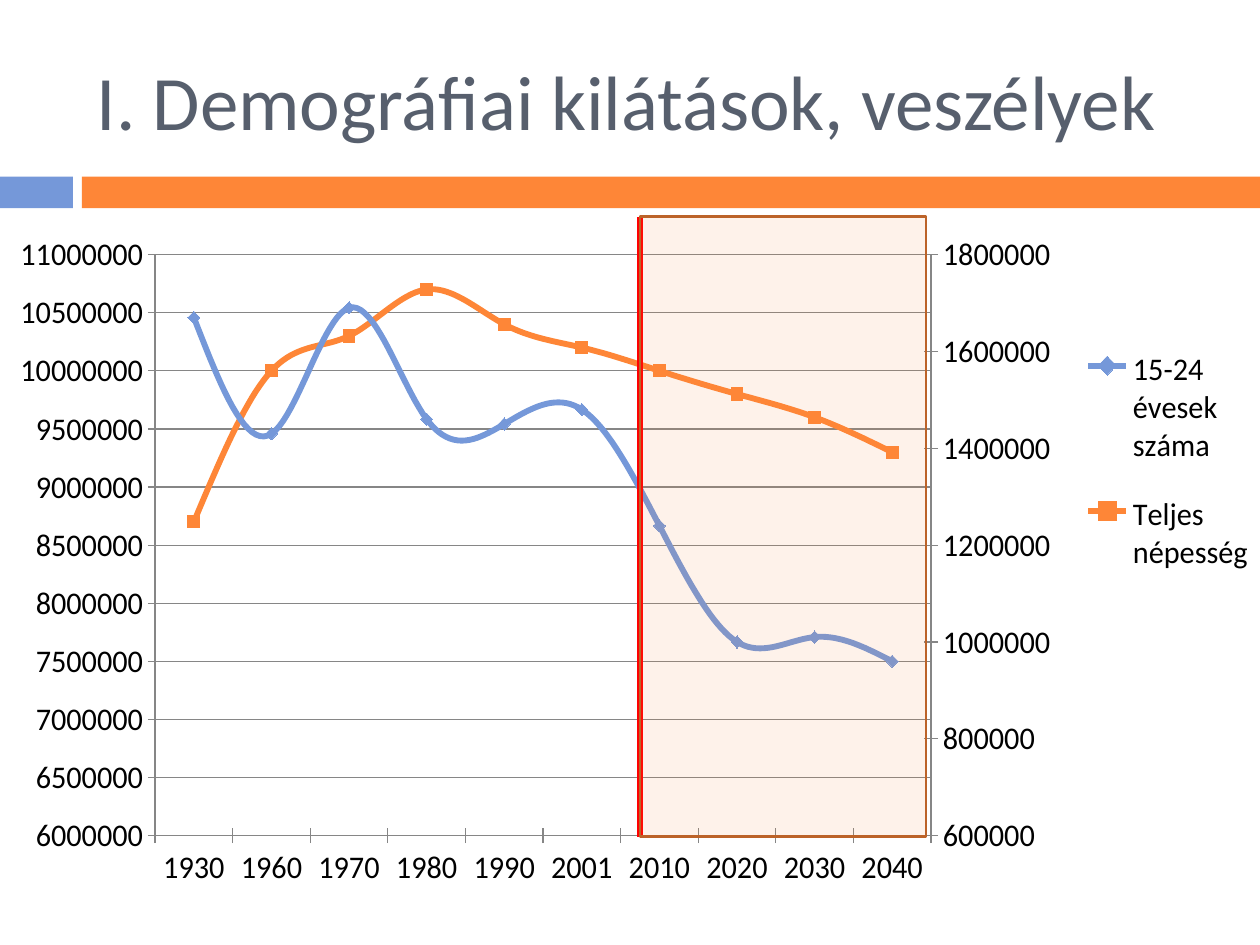
import copy

import pptx
import pptx.chart.data
import pptx.dml.color
import pptx.enum.chart
import pptx.enum.shapes
import pptx.enum.text
import pptx.oxml
import pptx.oxml.ns
import pptx.util

Cm, Pt = pptx.util.Cm, pptx.util.Pt
RGB = pptx.dml.color.RGBColor
qn = pptx.oxml.ns.qn
ENUM = pptx.enum.chart

BLUE = RGB(0x75, 0x98, 0xD9)
ORANGE = RGB(0xFE, 0x86, 0x37)
BROWN = RGB(0xBC, 0x63, 0x29)
SLATE = RGB(0x57, 0x5F, 0x6D)
GRAY = RGB(0x86, 0x86, 0x86)
RED = RGB(0xFF, 0x00, 0x00)
BLACK = RGB(0x00, 0x00, 0x00)
FONT = "Calibri"

YEARS = ["1930", "1960", "1970", "1980", "1990",
         "2001", "2010", "2020", "2030", "2040"]
TOTAL = [8700000, 10000000, 10300000, 10700000, 10400000,
         10200000, 10000000, 9800000, 9600000, 9300000]
YOUTH = [1670000, 1430000, 1690000, 1460000, 1450000,
         1480000, 1240000, 1000000, 1010000, 960000]


def add_box(slide, spot, fill, edge=None, alpha=None):
    box = slide.shapes.add_shape(
        pptx.enum.shapes.MSO_SHAPE.RECTANGLE, *map(Cm, spot))
    box.shadow.inherit = False
    box.fill.solid()
    box.fill.fore_color.rgb = fill
    if alpha is not None:
        color = box.element.spPr.find(".//" + qn("a:srgbClr"))
        node = color.makeelement(qn("a:alpha"), {"val": str(alpha * 1000)})
        color.append(node)
    if edge is None:
        box.line.fill.background()
    else:
        box.line.color.rgb = edge
        box.line.width = Pt(1.5)


def add_title(slide, text):
    frame = slide.shapes.add_textbox(
        Cm(1.7), Cm(0.64), Cm(22.66), Cm(2.74)).text_frame
    frame.word_wrap = True
    frame.vertical_anchor = pptx.enum.text.MSO_ANCHOR.MIDDLE
    line = frame.paragraphs[0]
    line.text = text
    line.font.name, line.font.size = FONT, Pt(44)
    line.font.color.rgb = SLATE


def add_rule(slide, x, foot, top):
    rule = slide.shapes.add_connector(
        pptx.enum.shapes.MSO_CONNECTOR.STRAIGHT, Cm(x), Cm(foot), Cm(x), Cm(top))
    rule.line.color.rgb = RED
    rule.line.width = Pt(3)
    props = rule.element.spPr
    props.append(props.makeelement(qn("a:effectLst"), {}))


def make_layout(x, y, w, h, inner=False):
    target = '<c:layoutTarget val="inner"/>' if inner else ""
    return pptx.oxml.parse_xml(
        f'<c:layout {pptx.oxml.ns.nsdecls("c")}><c:manualLayout>{target}'
        '<c:xMode val="edge"/><c:yMode val="edge"/>'
        f'<c:x val="{x}"/><c:y val="{y}"/><c:w val="{w}"/><c:h val="{h}"/>'
        '</c:manualLayout></c:layout>')


def set_layout(owner, layout, after=None):
    for old in owner.findall(qn("c:layout")):
        owner.remove(old)
    if after is None:
        owner.insert(0, layout)
    else:
        owner.find(qn(after)).addnext(layout)


def style_line(line, color, marker):
    line.smooth = True
    line.format.line.color.rgb = color
    line.format.line.width = Pt(3.5)
    line.marker.style = marker
    line.marker.size = 7
    line.marker.format.fill.solid()
    line.marker.format.fill.fore_color.rgb = color
    line.marker.format.line.color.rgb = color


def style_axes(chart):
    axis = chart.value_axis
    axis.minimum_scale, axis.maximum_scale = 6000000, 11000000
    axis.major_unit = 500000
    axis.has_major_gridlines = True
    axis.major_gridlines.format.line.color.rgb = GRAY
    axis.tick_labels.number_format = "General"
    axis.tick_labels.number_format_is_linked = False
    for each in (axis, chart.category_axis):
        each.major_tick_mark = ENUM.XL_TICK_MARK.CROSS
        each.format.line.color.rgb = GRAY


def split_axes(chart):
    area = chart.element.find(".//" + qn("c:plotArea"))
    first = area.find(qn("c:lineChart"))
    second = copy.deepcopy(first)
    first.remove(first.findall(qn("c:ser"))[1])
    second.remove(second.find(qn("c:ser")))
    first.addnext(second)
    cat = copy.deepcopy(area.find(qn("c:catAx")))
    val = copy.deepcopy(area.find(qn("c:valAx")))
    area.find(qn("c:valAx")).addnext(val)
    val.addnext(cat)
    for node, key in zip(second.findall(qn("c:axId")), ("5001", "5002")):
        node.set("val", key)
    for axis, own, other in ((cat, "5001", "5002"), (val, "5002", "5001")):
        axis.find(qn("c:axId")).set("val", own)
        axis.find(qn("c:crossAx")).set("val", other)
    cat.find(qn("c:delete")).set("val", "1")
    val.remove(val.find(qn("c:majorGridlines")))
    val.find(qn("c:axPos")).set("val", "r")
    val.find(qn("c:crosses")).set("val", "max")
    scale = val.find(qn("c:scaling"))
    scale.find(qn("c:min")).set("val", "600000")
    scale.find(qn("c:max")).set("val", "1800000")
    val.find(qn("c:majorUnit")).set("val", "200000")
    set_layout(area, make_layout(0.073, 0.052, 0.651, 0.798, inner=True))


def add_graph(slide):
    data = pptx.chart.data.CategoryChartData()
    data.categories = YEARS
    data.add_series("Teljes népesség", TOTAL)
    data.add_series("15-24 évesek száma", YOUTH)
    chart = slide.shapes.add_chart(
        ENUM.XL_CHART_TYPE.LINE_MARKERS_STACKED,
        Cm(0.41), Cm(4.37), Cm(24.99), Cm(14.68), data).chart
    chart.has_title = False
    chart.font.name, chart.font.size = FONT, Pt(18)
    chart.font.color.rgb = BLACK
    chart.plots[0].vary_by_categories = False
    total, youth = chart.plots[0].series
    style_line(total, ORANGE, ENUM.XL_MARKER_STYLE.SQUARE)
    style_line(youth, BLUE, ENUM.XL_MARKER_STYLE.DIAMOND)
    style_axes(chart)
    split_axes(chart)
    chart.has_legend = True
    chart.legend.position = ENUM.XL_LEGEND_POSITION.RIGHT
    chart.legend.include_in_layout = False
    legend = chart.element.find(".//" + qn("c:legend"))
    set_layout(legend, make_layout(0.85, 0.14, 0.15, 0.39), "c:legendPos")


def main():
    deck = pptx.Presentation()
    deck.slide_width, deck.slide_height = Cm(25.4), Cm(19.05)
    slide = deck.slides.add_slide(deck.slide_layouts[6])
    add_box(slide, (0, 3.56, 1.47, 0.64), BLUE)
    add_box(slide, (1.65, 3.56, 23.75, 0.64), ORANGE)
    add_title(slide, "I. Demográfiai kilátások, veszélyek")
    add_graph(slide)
    add_rule(slide, 12.9, 16.87, 4.37)
    add_box(slide, (12.9, 4.37, 5.77, 12.5), ORANGE, BROWN, 10)
    deck.save("out.pptx")


if __name__ == "__main__":
    main()
